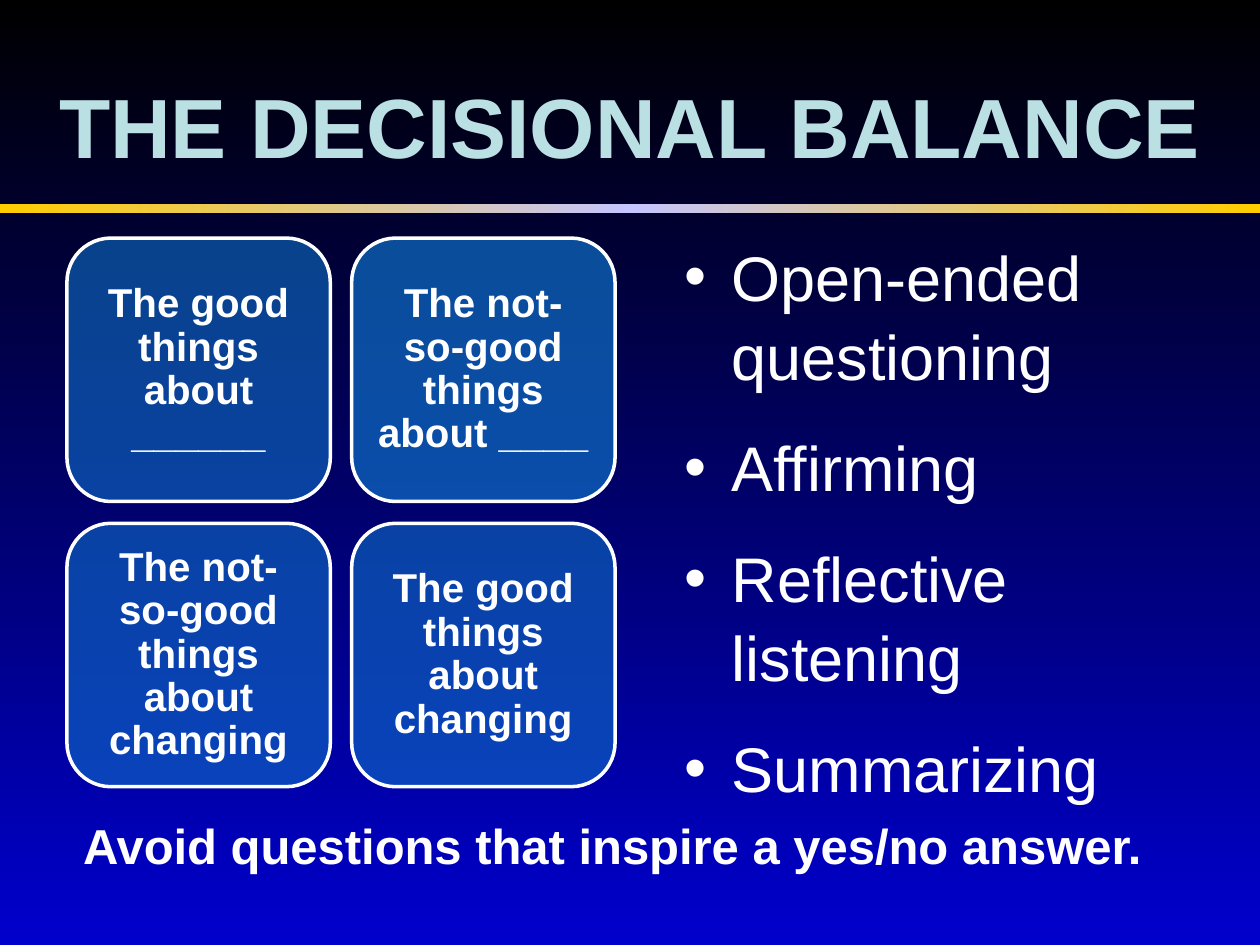
import copy

import pptx
import pptx.dml.color
import pptx.enum.shapes
import pptx.enum.text
import pptx.oxml
import pptx.oxml.ns
import pptx.util

Cm = pptx.util.Cm
Pt = pptx.util.Pt
ALIGN = pptx.enum.text.PP_ALIGN
ANCHOR = pptx.enum.text.MSO_ANCHOR
COLORS = {
    "night": "000000", "royal": "0000CC", "gold": "FFCC00", "lilac": "C5C5FF",
    "title": "BBE0E3", "text": "FFFFFF", "tile": "0F6FC6",
}
TILES = [
    ("The good things about ______", 60),
    ("The not- so-good things about ____", 70),
    ("The not-so-good things about changing", 60),
    ("The good things about changing", 60),
]
SKILLS = ["Open-ended questioning", "Affirming", "Reflective listening", "Summarizing"]


def color(name):
    """Return the named colour."""
    return pptx.dml.color.RGBColor.from_string(COLORS[name])


def apply_format(target, values):
    """Set each attribute of the target from a dict."""
    for name, value in values.items():
        setattr(target, name, value)


def place(shape, box):
    """Move the shape to a box of left, top, width and height in cm."""
    apply_format(shape, dict(zip(("left", "top", "width", "height"), map(Cm, box))))


def write(shape, lines, size, color_name, bold, frame_format, paragraph_format):
    """Fill the shape with formatted paragraphs."""
    frame = shape.text_frame
    frame.text = "\n".join(lines)
    apply_format(frame, {"word_wrap": True, "auto_size": pptx.enum.text.MSO_AUTO_SIZE.NONE})
    apply_format(frame, frame_format)
    for paragraph in frame.paragraphs:
        apply_format(paragraph, paragraph_format)
        apply_format(paragraph.font, {"size": Pt(size), "name": "Arial", "bold": bold})
        paragraph.font.color.rgb = color(color_name)
    frame.paragraphs[0].space_before = Pt(0)


def paint_gradient(fill, element, names, angle):
    """Give the fill evenly spaced stops of the named colours."""
    fill.gradient()
    fill.gradient_angle = angle
    stop_list = element.find(".//" + pptx.oxml.ns.qn("a:gsLst"))
    for _ in names[2:]:
        stop_list.append(copy.deepcopy(stop_list[0]))
    for index, (stop, name) in enumerate(zip(fill.gradient_stops, names)):
        stop.color.rgb = color(name)
        stop.position = index / (len(names) - 1)


def add_header(slide, box):
    """Place the title and the gold bar below it."""
    left, top, width, height = box
    place(slide.shapes.title, (left, top, width, 2.79))
    write(slide.shapes.title, ["THE DECISIONAL BALANCE"], 48, "title", True,
          {"vertical_anchor": ANCHOR.MIDDLE, "margin_bottom": Cm(0.41)},
          {"alignment": ALIGN.CENTER})
    bar = slide.shapes.add_shape(pptx.enum.shapes.MSO_SHAPE.RECTANGLE, 0, 0, 0, 0)
    place(bar, (left, top + height - 0.18, width, 0.18))
    bar.shadow.inherit = False
    bar.line.fill.background()
    paint_gradient(bar.fill, bar.element, ["gold", "lilac", "gold"], 0)


def add_balance(slide, box):
    """Place the two by two grid of translucent tiles."""
    left, top, width, height = box
    side = 5.31
    for index, (text, opacity) in enumerate(TILES):
        row, column = divmod(index, 2)
        tile = slide.shapes.add_shape(pptx.enum.shapes.MSO_SHAPE.ROUNDED_RECTANGLE, 0, 0, 0, 0)
        place(tile, (left + column * (width - side), top + row * (height - side), side, side))
        tile.shadow.inherit = False
        tile.fill.solid()
        tile.fill.fore_color.rgb = color("tile")
        tile.line.color.rgb = color("text")
        tile.line.width = Pt(2)
        fill_color = tile.element.spPr.find(".//" + pptx.oxml.ns.qn("a:srgbClr"))
        alpha = pptx.oxml.parse_xml(f'<a:alpha {pptx.oxml.ns.nsdecls("a")} val="{opacity * 1000}"/>')
        fill_color.append(alpha)
        margins = {f"margin_{edge}": Cm(0.23) for edge in ("left", "top", "right", "bottom")}
        write(tile, [text], 23, "text", True, {"vertical_anchor": ANCHOR.MIDDLE, **margins},
              {"alignment": ALIGN.CENTER, "line_spacing": 0.9})


def add_skills(slide, box):
    """Place the bulleted list of skills."""
    body = slide.placeholders[1]
    place(body, box)
    write(body, SKILLS, 36, "text", False, {"vertical_anchor": ANCHOR.TOP},
          {"space_before": Pt(18), "line_spacing": 1.05})


def add_advice(slide, box):
    """Place the closing advice."""
    advice = slide.shapes.add_textbox(0, 0, 0, 0)
    place(advice, box)
    write(advice, ["Avoid questions that inspire a yes/no answer."], 28, "text", True,
          {"vertical_anchor": ANCHOR.MIDDLE}, {"alignment": ALIGN.CENTER, "line_spacing": 0.8})


def main():
    """Build and save the slide."""
    presentation = pptx.Presentation()
    apply_format(presentation, {"slide_width": Cm(25.4), "slide_height": Cm(19.05)})
    slide = presentation.slides.add_slide(presentation.slide_layouts[1])
    paint_gradient(slide.background.fill, slide.element, ["night", "royal"], 270)
    add_header(slide, (0, 1.27, 25.4, 3.02))
    add_balance(slide, (1.35, 4.8, 11.05, 11.06))
    add_skills(slide, (13.54, 4.6, 11.86, 11.79))
    add_advice(slide, (1.22, 16.54, 22.25, 1.22))
    presentation.save("out.pptx")


if __name__ == "__main__":
    main()
